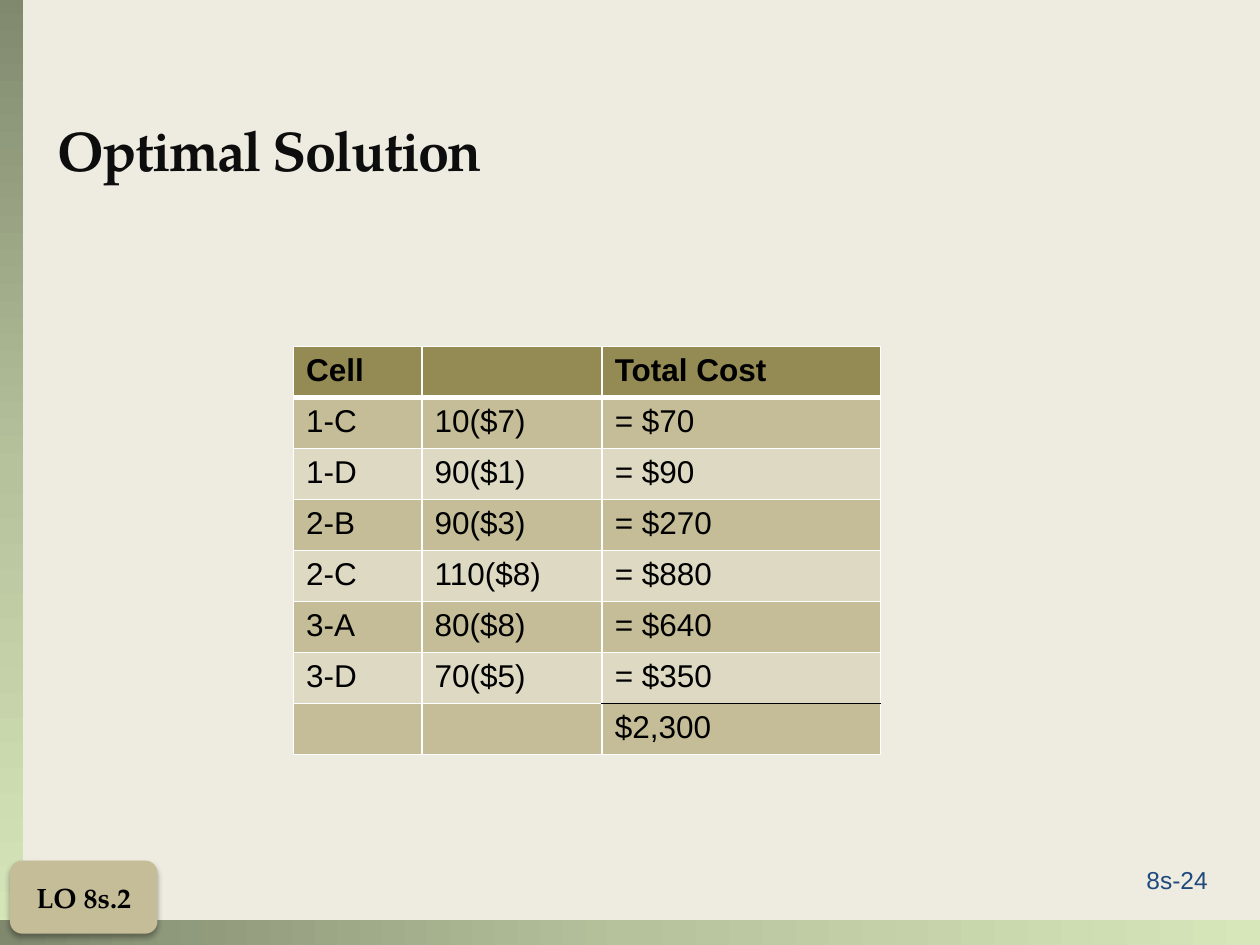
from copy import deepcopy

from lxml import etree
from pptx import Presentation
from pptx.dml.color import RGBColor
from pptx.enum.shapes import MSO_SHAPE
from pptx.enum.text import MSO_ANCHOR, MSO_AUTO_SIZE, PP_ALIGN
from pptx.oxml.ns import qn
from pptx.util import Inches, Pt

RECT, ROUND = MSO_SHAPE.RECTANGLE, MSO_SHAPE.ROUNDED_RECTANGLE
LEFT, CENTER = PP_ALIGN.LEFT, PP_ALIGN.CENTER
MIDDLE, BOTTOM = MSO_ANCHOR.MIDDLE, MSO_ANCHOR.BOTTOM
SANS, SERIF = "Arial", "TeX Gyre Pagella"
BLACK, WHITE = "000000", "FFFFFF"
HEAD, DARK, LIGHT = "948A54", "C4BD97", "DDD9C3"
FADE = ((0, "80896E"), (0.5, "B6C29C"), (1, "D8E7BA"))

ROWS = [
    ("Cell", "", "Total Cost"),
    ("1-C", "10($7)", "= $70"),
    ("1-D", "90($1)", "= $90"),
    ("2-B", "90($3)", "= $270"),
    ("2-C", "110($8)", "= $880"),
    ("3-A", "80($8)", "= $640"),
    ("3-D", "70($5)", "= $350"),
    ("", "", "$2,300"),
]
COLS = (1.02, 1.43, 2.21)


def rgb(color):
    return RGBColor.from_string(color)


def box(*sizes):
    return [Inches(size) for size in sizes]


def node(parent, tag, **attrs):
    return etree.SubElement(parent, qn(tag), {k: str(v) for k, v in attrs.items()})


class Deck:
    def __init__(self):
        self.prs = Presentation()
        self.prs.slide_width, self.prs.slide_height = box(10, 7.5)
        self.slide = self.prs.slides.add_slide(self.prs.slide_layouts[5])
        fill = self.slide.background.fill
        fill.solid()
        fill.fore_color.rgb = rgb("EEECE1")

    def style(self, para, size, face, color, bold=False, align=LEFT):
        para.alignment = align
        font = para.font
        font.size, font.name, font.bold = Pt(size), face, bold
        font.color.rgb = rgb(color)

    def shape(self, kind, at):
        shape = self.slide.shapes.add_shape(kind, *box(*at))
        shape.shadow.inherit = False
        shape.line.fill.background()
        return shape

    def bar(self, at, angle, turn=0):
        bar = self.shape(RECT, at)
        bar.rotation = turn
        bar.fill.gradient()
        bar.fill.gradient_angle = angle
        stops = bar._element.spPr.find(".//" + qn("a:gsLst"))
        stops.append(deepcopy(stops[0]))
        for stop, (pos, color) in zip(bar.fill.gradient_stops, FADE):
            stop.position = pos
            stop.color.rgb = rgb(color)

    def title(self, text, at):
        title = self.slide.shapes.title
        title.left, title.top, title.width, title.height = box(*at)
        frame = title.text_frame
        frame.text = text
        frame.vertical_anchor = BOTTOM
        para = frame.paragraphs[0]
        self.style(para, 32, SERIF, "0D0D0D", True)
        para.runs[0]._r.get_or_add_rPr().set("spc", "-100")

    def label(self, text, at):
        frame = self.slide.shapes.add_textbox(*box(*at)).text_frame
        frame.word_wrap = True
        frame.auto_size = MSO_AUTO_SIZE.SHAPE_TO_FIT_TEXT
        frame.text = text
        self.style(frame.paragraphs[0], 14, SANS, "1F497D")

    def badge(self, text, at):
        badge = self.shape(ROUND, at)
        badge.fill.solid()
        badge.fill.fore_color.rgb = rgb(DARK)
        effects = badge._element.spPr.find(qn("a:effectLst"))
        shadow = node(effects, "a:outerShdw", blurRad=Pt(3.5), dist=Pt(2.2),
                      dir=90 * 60000, rotWithShape=0)
        node(node(shadow, "a:srgbClr", val=BLACK), "a:alpha", val=32000)
        frame = badge.text_frame
        frame.text = text
        frame.vertical_anchor = MIDDLE
        self.style(frame.paragraphs[0], 16, SERIF, BLACK, True, CENTER)

    def edges(self, cell, **special):
        """Draw white 1 pt borders, except sides given as (color, width)."""
        props = cell._tc.get_or_add_tcPr()
        for side in "LRTB":
            color, width = special.get(side, (WHITE, 1))
            line = node(props, "a:ln" + side, w=Pt(width))
            node(node(line, "a:solidFill"), "a:srgbClr", val=color)

    def table(self, rows, at):
        table = self.slide.shapes.add_table(len(rows), len(COLS), *box(*at)).table
        for col, width in zip(table.columns, COLS):
            col.width = Inches(width)
        thick, total = (WHITE, 3), (BLACK, 1)
        last = len(rows) - 1
        for r, row in enumerate(rows):
            for c, text in enumerate(row):
                cell = table.cell(r, c)
                special = {0: {"B": thick}, 1: {"T": thick}}.get(r, {})
                if c == len(COLS) - 1:
                    special = {last - 1: {"B": total}, last: {"T": total}}.get(r, special)
                self.edges(cell, **special)
                cell.fill.solid()
                shade = HEAD if r == 0 else DARK if r % 2 else LIGHT
                cell.fill.fore_color.rgb = rgb(shade)
                cell.text = text
                self.style(cell.text_frame.paragraphs[0], 18, SANS, BLACK, r == 0)


def main():
    deck = Deck()
    deck.bar((-3.66, 3.63, 7.5, 0.19), 180, 270)
    deck.bar((0, 7.3, 10, 0.2), 0)
    deck.label("8s-24", (9, 6.82, 0.82, 0.34))
    deck.table(ROWS, (2.33, 2.75, sum(COLS), 3.24))
    deck.title("Optimal Solution", (0.36, 0.17, 9, 1.33))
    deck.badge("LO 8s.2", (0.08, 6.83, 1.17, 0.58))
    deck.prs.save("out.pptx")


if __name__ == "__main__":
    main()
